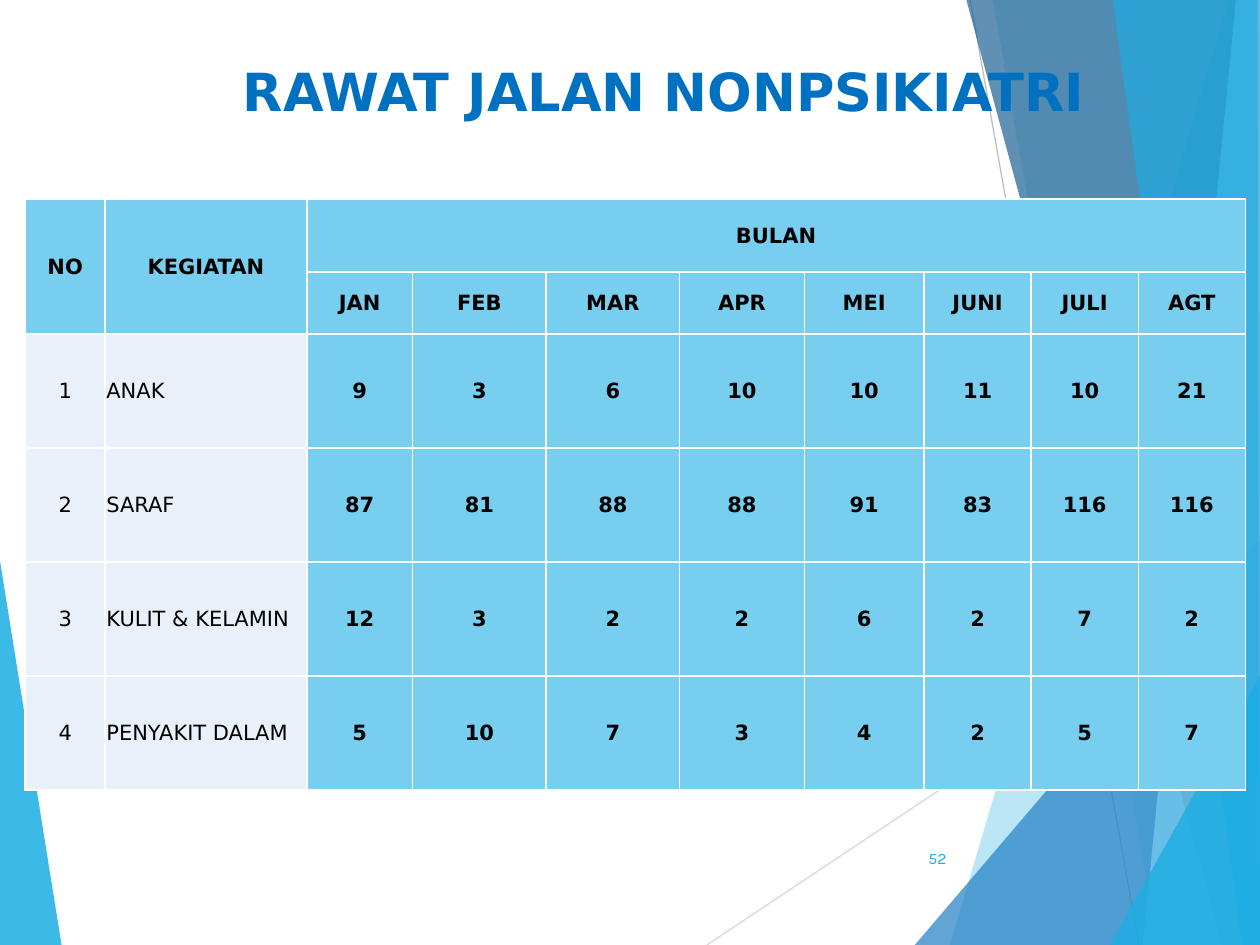
from dataclasses import dataclass
from typing import NamedTuple

from lxml.etree import SubElement as Sub
from pptx import Presentation
from pptx.dml.color import RGBColor as Rgb
from pptx.enum.shapes import MSO_CONNECTOR as Link
from pptx.enum.text import MSO_ANCHOR as Anchor, PP_ALIGN as Align
from pptx.oxml.ns import qn
from pptx.util import Inches, Pt


@dataclass(frozen=True)
class Theme:
    """Colours, fonts and type sizes of the slide."""
    sky: str = "1CADE4"
    blue: str = "2683C6"
    navy: str = "1D6294"
    light: str = "77CEEF"
    pale: str = "E8F1FA"
    head: str = "0070C0"
    ink: str = "000000"
    rule: str = "FFFFFF"
    near: str = "D9D9D9"
    far: str = "BFBFBF"
    font: str = "DejaVu Sans"
    thin: str = "Karla"
    big: int = 30
    body: int = 12
    small: int = 9


class Facet(NamedTuple):
    """A tinted polygon with corners in percent of the slide."""
    tint: str
    alpha: int
    spots: tuple


class Ray(NamedTuple):
    """A thin line with ends in percent of the slide."""
    tint: str
    start: tuple
    end: tuple


class Style(NamedTuple):
    """The look of one run and its paragraph."""
    size: int
    tint: str
    bold: bool = False
    align: Align = Align.CENTER
    font: str = "DejaVu Sans"


class Label(NamedTuple):
    """A text box placed in percent of the slide."""
    text: str
    box: tuple
    style: Style
    anchor: Anchor


T = Theme()
WIDE, HIGH = Inches(10), Inches(7.5)

DECOR = (
    Facet(T.sky, 85, ((-0.1, 58.5), (4.9, 100.1), (-0.1, 100))),
    Ray(T.near, (56.1, 100), (100.1, 60.9)),
    Ray(T.far, (77, 0), (90.4, 100)),
    Facet(T.sky, 30, ((97.5, 0), (75.4, 100), (100.2, 100.1), (100.1, 0))),
    Facet(T.sky, 20, ((78.8, 0), (91.9, 100), (100.1, 100), (100.1, 0))),
    Facet(T.blue, 72, ((72.6, 100), (100, 57.2), (100.1, 100))),
    Facet(T.navy, 70, ((76.7, 0), (97, 100), (100.1, 100), (100.1, 0))),
    Facet(T.light, 70, ((98.1, 0), (90.7, 100), (100.1, 100), (100, 0))),
    Facet(T.sky, 65, ((88.3, 0), (98.6, 100), (100, 100), (99.8, 0))),
    Facet(T.sky, 80, ((88.1, 100), (100.1, 71.3), (100.1, 100))),
)

LABELS = (
    Label("RAWAT JALAN NONPSIKIATRI", (13.3, 5.6, 78.8, 13.7),
          Style(T.big, T.head, True), Anchor.TOP),
    Label("52", (70.5, 88.13, 5.6, 5.33),
          Style(T.small, T.sky, False, Align.RIGHT, T.thin), Anchor.MIDDLE),
)

MONTHS = ("JAN", "FEB", "MAR", "APR", "MEI", "JUNI", "JULI", "AGT")
CASES = {
    "ANAK": (9, 3, 6, 10, 10, 11, 10, 21),
    "SARAF": (87, 81, 88, 88, 91, 83, 116, 116),
    "KULIT & KELAMIN": (12, 3, 2, 2, 6, 2, 7, 2),
    "PENYAKIT DALAM": (5, 10, 7, 3, 4, 2, 5, 7),
}
COLS = (6.35, 16, 8.4, 10.6, 10.6, 9.9, 9.5, 8.5, 8.5, 8.5)
ROWS = (7.73, 6.53) + (12.07,) * len(CASES)
ORIGIN = (2, 21.07)


def across(part: float) -> int:
    """Turn a percentage of the slide width into a length."""
    return round(WIDE * part / 100)


def down(part: float) -> int:
    """Turn a percentage of the slide height into a length."""
    return round(HIGH * part / 100)


def spot(point: tuple) -> tuple:
    """Turn a point in percent into slide lengths."""
    return across(point[0]), down(point[1])


def write(frame, text: str, style: Style) -> None:
    """Add one styled run to the first paragraph of a frame."""
    para = frame.paragraphs[0]
    para.alignment = style.align
    run = para.add_run()
    run.text = text
    font = run.font
    font.size, font.bold, font.name = Pt(style.size), style.bold, style.font
    font.color.rgb = Rgb.from_string(style.tint)


def draw_facet(slide, facet: Facet) -> None:
    """Draw a see-through polygon without an outline."""
    first, *rest = map(spot, facet.spots)
    pen = slide.shapes.build_freeform(*first)
    pen.add_line_segments(rest, close=True)
    shape = pen.convert_to_shape()
    shape.shadow.inherit = False
    shape.line.fill.background()
    shape.fill.solid()
    shape.fill.fore_color.rgb = Rgb.from_string(facet.tint)
    tint = shape._element.spPr.find(qn("a:solidFill"))[0]
    Sub(tint, qn("a:alpha"), val=str(facet.alpha * 1000))


def draw_ray(slide, ray: Ray) -> None:
    """Draw a thin straight line without a shadow."""
    line = slide.shapes.add_connector(
        Link.STRAIGHT, *spot(ray.start), *spot(ray.end))
    line.line.width = Pt(0.75)
    line.line.color.rgb = Rgb.from_string(ray.tint)
    Sub(line._element.spPr, qn("a:effectLst"))


def draw_label(slide, label: Label) -> None:
    """Draw a wrapped text box."""
    box = slide.shapes.add_textbox(*spot(label.box[:2]), *spot(label.box[2:]))
    frame = box.text_frame
    frame.word_wrap = True
    frame.vertical_anchor = label.anchor
    write(frame, label.text, label.style)


def dress(cell, tint: str) -> None:
    """Give a cell its borders, fill, margins and anchor."""
    props = cell._tc.get_or_add_tcPr()
    for side in ("lnL", "lnR", "lnT", "lnB"):
        edge = Sub(props, qn(f"a:{side}"), w=str(Pt(1)))
        Sub(Sub(edge, qn("a:solidFill")), qn("a:srgbClr"), val=T.rule)
    cell.fill.solid()
    cell.fill.fore_color.rgb = Rgb.from_string(tint)
    cell.margin_left = cell.margin_right = cell.margin_top = Inches(0.01)
    cell.margin_bottom = 0
    cell.vertical_anchor = Anchor.MIDDLE


def draw_table(slide) -> None:
    """Draw the monthly table with its merged headings."""
    size = across(sum(COLS)), down(sum(ROWS))
    table = slide.shapes.add_table(
        len(ROWS), len(COLS), *spot(ORIGIN), *size).table
    table.first_row = table.horz_banding = False
    for col, part in zip(table.columns, COLS):
        col.width = across(part)
    for row, part in zip(table.rows, ROWS):
        row.height = down(part)
    grid = [("NO", "KEGIATAN", "BULAN") + ("",) * 7, ("", "") + MONTHS]
    grid += [(i, name, *vals) for i, (name, vals) in enumerate(CASES.items(), 1)]
    for r, row in enumerate(grid):
        for c, text in enumerate(row):
            side = r > 1 and c < 2
            cell = table.cell(r, c)
            dress(cell, T.pale if side else T.light)
            if text != "":
                align = Align.LEFT if side and c == 1 else Align.CENTER
                write(cell.text_frame, str(text),
                      Style(T.body, T.ink, not side, align))
    for c in (0, 1):
        table.cell(0, c).merge(table.cell(1, c))
    table.cell(0, 2).merge(table.cell(0, len(COLS) - 1))


def main() -> None:
    """Build the slide and save it."""
    deck = Presentation()
    deck.slide_width, deck.slide_height = WIDE, HIGH
    slide = deck.slides.add_slide(deck.slide_layouts[6])
    for item in DECOR:
        (draw_ray if isinstance(item, Ray) else draw_facet)(slide, item)
    draw_table(slide)
    for label in LABELS:
        draw_label(slide, label)
    deck.save("out.pptx")


if __name__ == "__main__":
    main()
